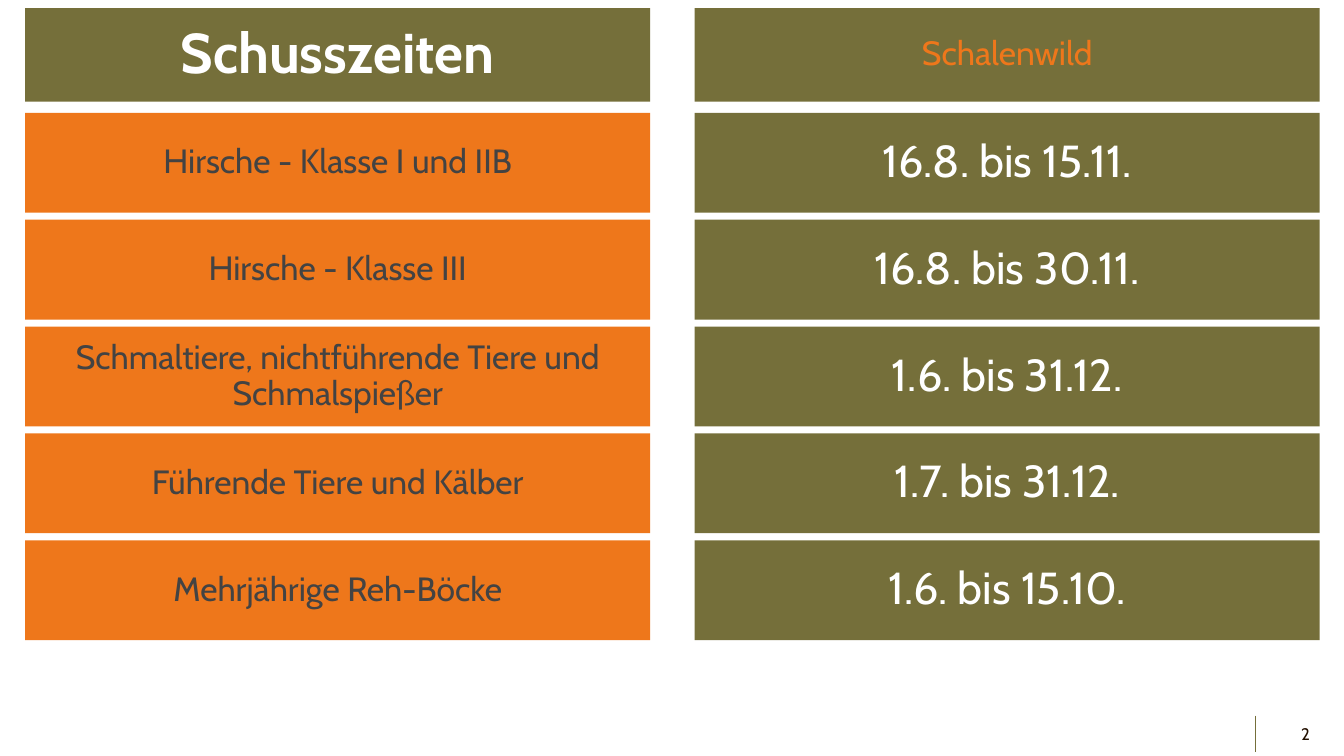
from lxml import etree
from pptx import Presentation
from pptx.dml.color import RGBColor
from pptx.enum.shapes import MSO_CONNECTOR, MSO_SHAPE
from pptx.enum.text import MSO_ANCHOR, PP_ALIGN
from pptx.oxml.ns import qn
from pptx.util import Inches, Pt

RECTANGLE = MSO_SHAPE.RECTANGLE
STRAIGHT = MSO_CONNECTOR.STRAIGHT
MIDDLE = MSO_ANCHOR.MIDDLE
CENTER = PP_ALIGN.CENTER
RIGHT = PP_ALIGN.RIGHT

OLIVE = RGBColor(0x75, 0x6F, 0x3A)
ORANGE = RGBColor(0xEE, 0x77, 0x1B)
GRAY = RGBColor(0x43, 0x43, 0x43)
DARK = RGBColor(0x23, 0x10, 0x01)
WHITE = RGBColor(0xFF, 0xFF, 0xFF)

HUNTING_SEASONS = [
    ("Hirsche - Klasse I und IIB", "16.8. bis 15.11."),
    ("Hirsche - Klasse III", "16.8. bis 30.11."),
    ("Schmaltiere, nichtführende Tiere und Schmalspießer", "1.6. bis 31.12."),
    ("Führende Tiere und Kälber", "1.7. bis 31.12."),
    ("Mehrjährige Reh-Böcke", "1.6. bis 15.10."),
]


def write_text(shape, text, *, size, color, font="Cabin", bold=False,
               align=CENTER, line_spacing=0.9):
    frame = shape.text_frame
    frame.word_wrap = True
    frame.vertical_anchor = MIDDLE
    paragraph = frame.paragraphs[0]
    paragraph.alignment = align
    paragraph.line_spacing = line_spacing
    run = paragraph.add_run()
    run.text = text
    run.font.name = font
    run.font.size = Pt(size)
    run.font.bold = bold
    run.font.color.rgb = color


class SeasonSlide:
    """Two columns of boxes: a header row above evenly spaced season rows."""

    WIDTH, HEIGHT = 13.33, 7.5
    LEFT, COLUMN_STEP, BOX_WIDTH = 0.25, 6.64, 6.2
    HEADER_TOP, HEADER_HEIGHT = 0.08, 0.93
    FIRST_ROW_TOP, ROW_STEP, ROW_HEIGHT = 1.12, 1.06, 0.99

    def __init__(self, presentation):
        presentation.slide_width = Inches(self.WIDTH)
        presentation.slide_height = Inches(self.HEIGHT)
        blank_layout = presentation.slide_layouts[6]
        self.shapes = presentation.slides.add_slide(blank_layout).shapes

    def add_box(self, column, top, height, text, fill, **text_format):
        left = self.LEFT + column * self.COLUMN_STEP
        box = self.shapes.add_shape(RECTANGLE, Inches(left), Inches(top),
                                    Inches(self.BOX_WIDTH), Inches(height))
        box.shadow.inherit = False
        box.fill.solid()
        box.fill.fore_color.rgb = fill
        box.line.fill.background()
        write_text(box, text, **text_format)

    def add_header(self, column, text, **text_format):
        self.add_box(column, self.HEADER_TOP, self.HEADER_HEIGHT, text, OLIVE,
                     **text_format)

    def add_season(self, row, game, period):
        top = self.FIRST_ROW_TOP + row * self.ROW_STEP
        self.add_box(0, top, self.ROW_HEIGHT, game, ORANGE, size=24, color=GRAY)
        self.add_box(1, top, self.ROW_HEIGHT, period, OLIVE, size=32, color=WHITE)

    def add_divider(self, x, top, bottom):
        line = self.shapes.add_connector(STRAIGHT, Inches(x), Inches(top),
                                         Inches(x), Inches(bottom))
        line.line.color.rgb = OLIVE
        line.line.width = Pt(0.75)
        etree.SubElement(line._element.spPr, qn("a:effectLst"))

    def add_page_number(self, number):
        width, height = 0.51, 0.4
        right = self.LEFT + self.COLUMN_STEP + self.BOX_WIDTH
        box = self.shapes.add_textbox(Inches(right - width), Inches(7.08),
                                      Inches(width), Inches(height))
        write_text(box, str(number), size=12, color=DARK, align=RIGHT,
                   line_spacing=1.0)


def main():
    presentation = Presentation()
    slide = SeasonSlide(presentation)
    slide.add_header(0, "Schusszeiten", size=40, color=WHITE, bold=True)
    slide.add_header(1, "Schalenwild", size=24, color=ORANGE)
    for row, (game, period) in enumerate(HUNTING_SEASONS):
        slide.add_season(row, game, period)
    slide.add_divider(12.45, 7.1, 7.46)
    slide.add_page_number(2)
    presentation.save("out.pptx")


if __name__ == "__main__":
    main()
